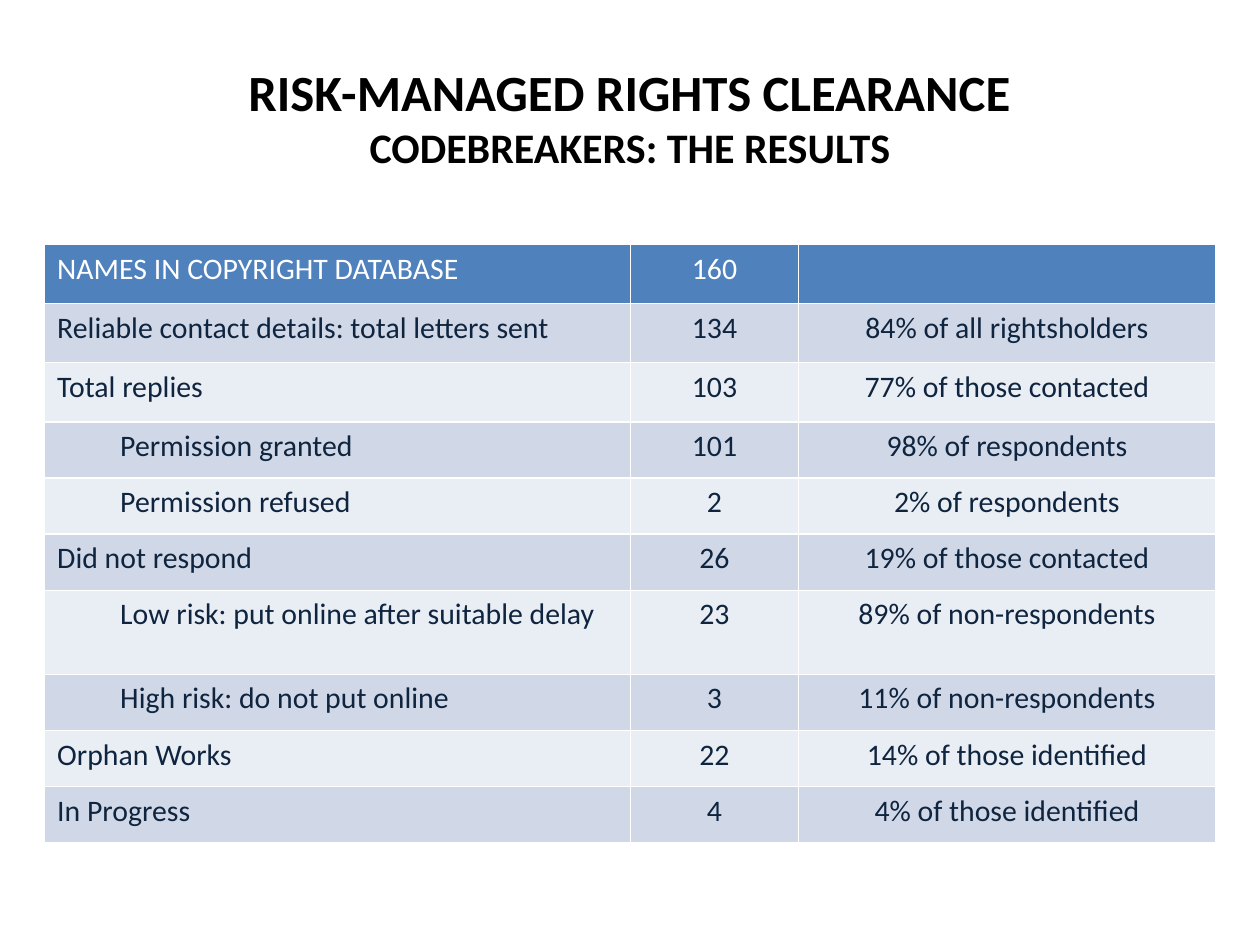
from pptx import Presentation
from pptx import util as u
from pptx.dml.color import RGBColor
from pptx.enum import text

BLACK = RGBColor(0x00, 0x00, 0x00)
WHITE = RGBColor(0xFF, 0xFF, 0xFF)
NAVY = RGBColor(0x0F, 0x24, 0x3E)
BLUE = RGBColor(0x4F, 0x81, 0xBD)
BANDS = RGBColor(0xE9, 0xED, 0xF4), RGBColor(0xD0, 0xD8, 0xE8)

COLS = 334.7, 96.2, 238.1
ROWS = [
    (33.8, 0, "NAMES IN COPYRIGHT DATABASE", "160", ""),
    (33.8, 0, "Reliable contact details: total letters sent", "134", "84% of all rightsholders"),
    (33.8, 0, "Total replies", "103", "77% of those contacted"),
    (32.1, 1, "Permission granted", "101", "98% of respondents"),
    (32.1, 1, "Permission refused", "2", "2% of respondents"),
    (32.1, 0, "Did not respond", "26", "19% of those contacted"),
    (48, 1, "Low risk: put online after suitable delay", "23", "89% of non-respondents"),
    (32.1, 1, "High risk: do not put online", "3", "11% of non-respondents"),
    (32.1, 0, "Orphan Works", "22", "14% of those identified"),
    (32.1, 0, "In Progress", "4", "4% of those identified"),
]


def style(font, color, bold):
    """Set the face, colour and weight of a font."""
    font.name = "Calibri"
    font.color.rgb = color
    font.bold = bold


def add_title(slide):
    """Add the two-line heading."""
    box = slide.shapes.add_textbox(u.Pt(36), u.Pt(21.6), u.Pt(648), u.Pt(90))
    frame = box.text_frame
    frame.word_wrap = True
    frame.vertical_anchor = text.MSO_ANCHOR.MIDDLE
    para = frame.paragraphs[0]
    para.alignment = text.PP_ALIGN.CENTER
    style(para.font, BLACK, True)
    head = para.add_run()
    head.text = "RISK-MANAGED RIGHTS CLEARANCE"
    head.font.size = u.Pt(29)
    para.add_line_break()
    sub = para.add_run()
    sub.text = "CODEBREAKERS: THE RESULTS"
    sub.font.size = u.Pt(24)


def fill_cell(cell, words, fill, color):
    """Write and colour one cell, and return its paragraph."""
    cell.fill.solid()
    cell.fill.fore_color.rgb = fill
    cell.text = words
    para = cell.text_frame.paragraphs[0]
    style(para.font, color, False)
    para.font.size = u.Pt(17)
    return para


def add_results(slide):
    """Add the table of clearance results."""
    high = sum(row[0] for row in ROWS)
    frame = slide.shapes.add_table(
        len(ROWS), len(COLS), u.Pt(25.5), u.Pt(139.7), u.Pt(sum(COLS)), u.Pt(high))
    table = frame.table
    for col, width in zip(table.columns, COLS):
        col.width = u.Pt(width)
    for r, (height, level, *words) in enumerate(ROWS):
        table.rows[r].height = u.Pt(height)
        fill, color = (BANDS[r % 2], NAVY) if r else (BLUE, WHITE)
        for c, word in enumerate(words):
            para = fill_cell(table.cell(r, c), word, fill, color)
            if c:
                para.alignment = text.PP_ALIGN.CENTER
            elif level:
                para.level = level
                para._p.get_or_add_pPr().set("marL", str(u.Pt(36)))


def main():
    """Build and save the slide."""
    deck = Presentation()
    deck.slide_width, deck.slide_height = u.Pt(720), u.Pt(540)
    slide = deck.slides.add_slide(deck.slide_layouts[6])
    add_title(slide)
    add_results(slide)
    deck.save("out.pptx")


if __name__ == "__main__":
    main()
